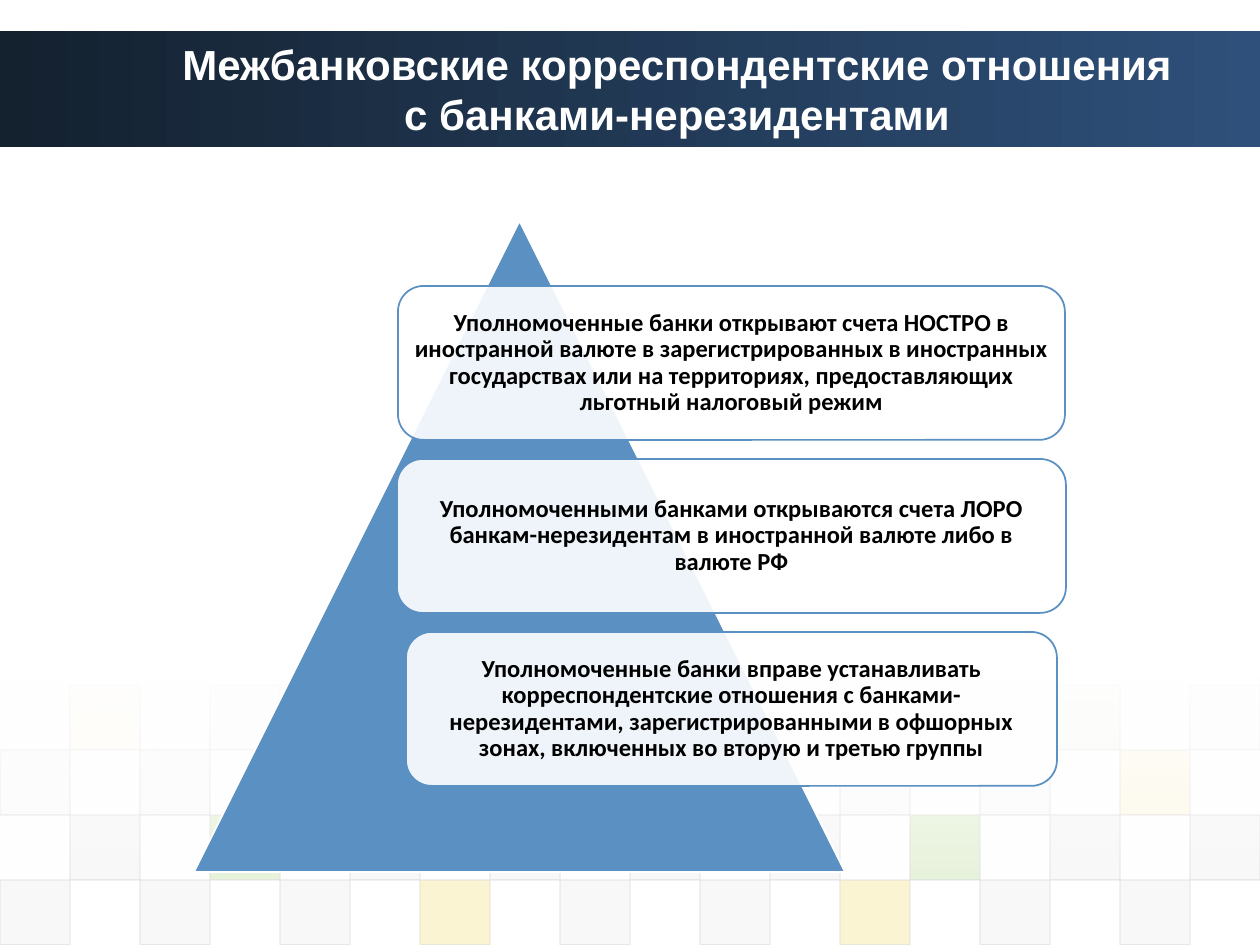
from dataclasses import dataclass

from lxml.etree import SubElement
from pptx import Presentation
from pptx.dml.color import RGBColor
from pptx.enum.shapes import MSO_SHAPE as Preset
from pptx.enum.text import MSO_ANCHOR as Anchor, PP_ALIGN as Align
from pptx.oxml.ns import qn
from pptx.util import Emu, Pt

EMU_PER_PX = 914400 // 126


@dataclass(frozen=True)
class Theme:
    white: str = "FFFFFF"
    ink: str = "000000"
    header_start: str = "14212F"
    header_end: str = "2E507A"
    accent: str = "5A90C2"
    tile_line: str = "DDDDDD"
    heading_font: str = "Arial"
    body_font: str = "Calibri"
    heading_size: int = 24
    body_size: int = 14


THEME = Theme()
TILE_COLORS = {"d": "DDDDDD", "e": "EAEAEA", "g": "8AC246", "y": "EFC821"}
MOSAIC = [("yeeydyege", 5), ("ddddgdddy", 10), ("dgddddgdd", 20), ("dddyddydd", 20)]
TILE_WIDTH, TILE_HEIGHT, MOSAIC_TOP = 70, 65, 685
CARD_CENTER, CARD_TOP, CARD_HEIGHT, CARD_PITCH = 731, 286, 154, 173

HEADING = "Межбанковские корреспондентские отношения с банками-нерезидентами"
CARDS = [
    (667, "Уполномоченные банки открывают счета НОСТРО в иностранной валюте в "
          "зарегистрированных в иностранных государствах или на территориях, "
          "предоставляющих льготный налоговый режим"),
    (669, "Уполномоченными банками открываются счета ЛОРО банкам-нерезидентам "
          "в иностранной валюте либо в валюте РФ"),
    (651, "Уполномоченные банки вправе устанавливать корреспондентские отношения "
          "с банками-нерезидентами, зарегистрированными в офшорных зонах, "
          "включенных во вторую и третью группы"),
]


def px(length):
    return Emu(length * EMU_PER_PX)


class SlideBuilder:
    """Draws styled elements on the current slide."""

    def __init__(self, slide, theme):
        self.slide = slide
        self.theme = theme

    def _fade(self, shape, opacities):
        colors = shape._element.spPr.iter(qn("a:srgbClr"))
        for color, opacity in zip(list(colors), opacities):
            SubElement(color, qn("a:alpha")).set("val", str(opacity * 1000))

    def _write(self, frame, text, font, size, color):
        frame.word_wrap = True
        frame.vertical_anchor = Anchor.MIDDLE
        frame.text = text
        paragraph = frame.paragraphs[0]
        paragraph.alignment = Align.CENTER
        style = paragraph.runs[0].font
        style.name, style.size, style.bold = font, Pt(size), True
        style.color.rgb = RGBColor.from_string(color)
        return paragraph

    def _place(self, preset, box):
        shape = self.slide.shapes.add_shape(preset, *map(px, box))
        shape.shadow.inherit = False
        return shape

    def solid(self, preset, box, fill, line, width=1, opacities=()):
        shape = self._place(preset, box)
        shape.fill.solid()
        shape.fill.fore_color.rgb = RGBColor.from_string(fill)
        shape.line.color.rgb = RGBColor.from_string(line)
        shape.line.width = Pt(width)
        self._fade(shape, opacities)
        return shape

    def gradient(self, box, colors, angle, opacities=()):
        band = self._place(Preset.RECTANGLE, box)
        band.fill.gradient()
        band.fill.gradient_angle = angle
        for stop, color in zip(band.fill.gradient_stops, colors):
            stop.color.rgb = RGBColor.from_string(color)
        band.line.fill.background()
        self._fade(band, opacities)

    def heading(self, box, text):
        title = self.slide.shapes.add_textbox(*map(px, box))
        theme = self.theme
        self._write(title.text_frame, text, theme.heading_font, theme.heading_size, theme.white)

    def card(self, box, text):
        theme = self.theme
        card = self.solid(Preset.ROUNDED_RECTANGLE, box, theme.white, theme.accent, opacities=[90])
        frame = card.text_frame
        frame.margin_left = frame.margin_right = px(7)
        frame.margin_top = frame.margin_bottom = px(7)
        paragraph = self._write(frame, text, theme.body_font, theme.body_size, theme.ink)
        paragraph.line_spacing = 0.9

    def mosaic(self):
        for row, (tiles, opacity) in enumerate(MOSAIC):
            for index, key in enumerate(tiles):
                column = 2 * index + (row + 1) % 2
                box = (column * TILE_WIDTH, MOSAIC_TOP + row * TILE_HEIGHT, TILE_WIDTH, TILE_HEIGHT)
                self.solid(Preset.RECTANGLE, box, TILE_COLORS[key], self.theme.tile_line,
                           0.75, [opacity, 60])


def main():
    deck = Presentation()
    deck.slide_width, deck.slide_height = px(1260), px(945)
    builder = SlideBuilder(deck.slides.add_slide(deck.slide_layouts[6]), THEME)

    builder.gradient((0, 31, 1260, 116), (THEME.header_start, THEME.header_end), 0)
    builder.mosaic()
    builder.gradient((0, 677, 1260, 204), (THEME.white, THEME.white), 270, [90, 0])
    builder.heading((168, 31, 1018, 116), HEADING)

    builder.solid(Preset.ISOSCELES_TRIANGLE, (194, 221, 651, 651), THEME.accent, THEME.white)
    for index, (width, text) in enumerate(CARDS):
        left = CARD_CENTER - width // 2
        builder.card((left, CARD_TOP + index * CARD_PITCH, width, CARD_HEIGHT), text)

    deck.save("out.pptx")


if __name__ == "__main__":
    main()
